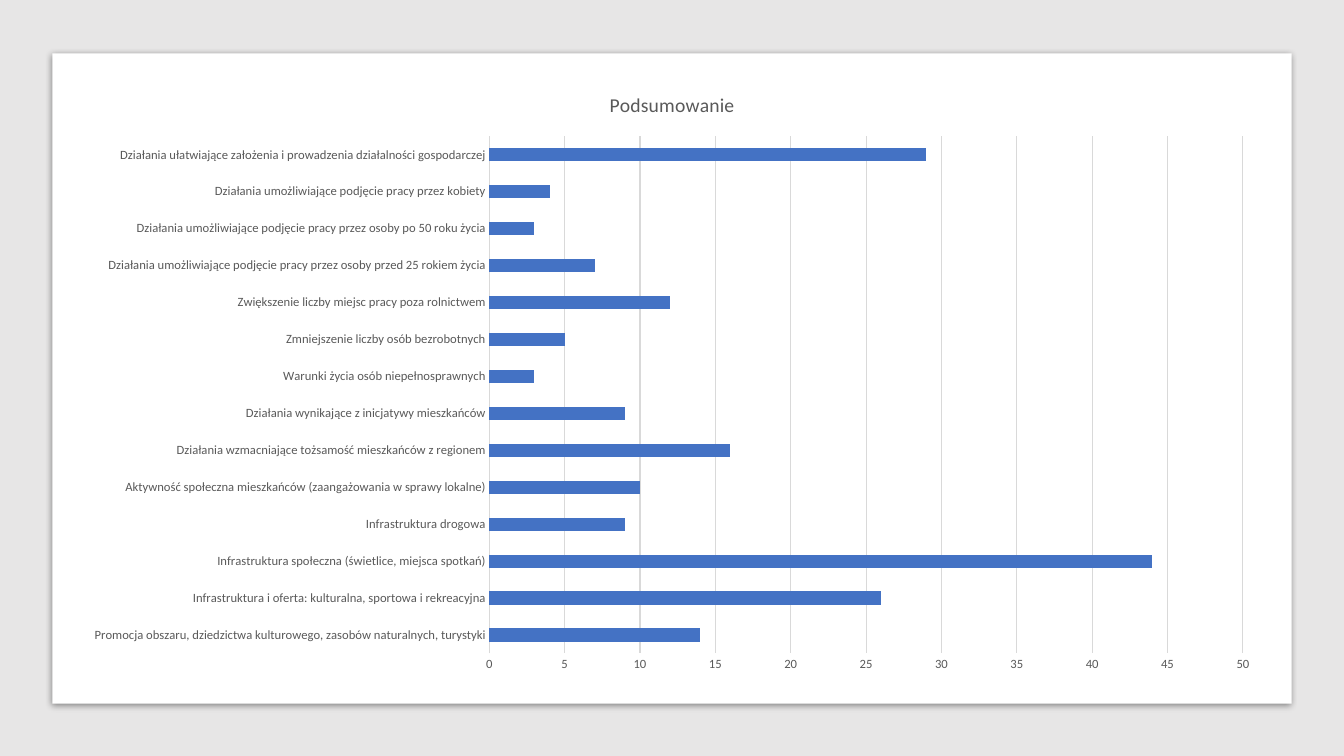
from lxml.etree import SubElement
from pptx import Presentation
from pptx.chart.data import CategoryChartData
from pptx.dml.color import RGBColor
from pptx.enum.chart import XL_CHART_TYPE as ChartType, XL_TICK_MARK as TickMark
from pptx.enum.shapes import MSO_SHAPE as ShapeType
from pptx.oxml.ns import qn
from pptx.util import Inches, Pt

TITLE = "Podsumowanie"
GREY_TEXT = "595959"
GREY_LINE = "D9D9D9"
ANSWERS = {
    "Promocja obszaru, dziedzictwa kulturowego, zasobów naturalnych, turystyki": 14,
    "Infrastruktura i oferta: kulturalna, sportowa i rekreacyjna": 26,
    "Infrastruktura społeczna (świetlice, miejsca spotkań)": 44,
    "Infrastruktura drogowa": 9,
    "Aktywność społeczna mieszkańców (zaangażowania w sprawy lokalne)": 10,
    "Działania wzmacniające tożsamość mieszkańców z regionem": 16,
    "Działania wynikające z inicjatywy mieszkańców": 9,
    "Warunki życia osób niepełnosprawnych": 3,
    "Zmniejszenie liczby osób bezrobotnych": 5,
    "Zwiększenie liczby miejsc pracy poza rolnictwem": 12,
    "Działania umożliwiające podjęcie pracy przez osoby przed 25 rokiem życia": 7,
    "Działania umożliwiające podjęcie pracy przez osoby po 50 roku życia": 3,
    "Działania umożliwiające podjęcie pracy przez kobiety": 4,
    "Działania ułatwiające założenia i prowadzenia działalności gospodarczej": 29,
}


def color(value):
    return RGBColor.from_string(value)


def set_values(target, values):
    for name, value in values.items():
        setattr(target, name, value)


def format_font(font, size, font_color):
    set_values(font, {"name": "Calibri", "size": Pt(size), "bold": False})
    font.color.rgb = color(font_color)


def format_line(line):
    line.color.rgb = color(GREY_LINE)
    line.width = Pt(0.75)


def add_panel(slide, left, top, width, height, fill):
    shape = slide.shapes.add_shape(
        ShapeType.RECTANGLE, Inches(left), Inches(top), Inches(width), Inches(height)
    )
    shape.shadow.inherit = False
    shape.fill.solid()
    shape.fill.fore_color.rgb = color(fill)
    shape.line.fill.background()
    return shape


def add_shadow(shape, blur, distance, opacity):
    effects = shape.element.spPr.find(qn("a:effectLst"))
    shadow = SubElement(
        effects, qn("a:outerShdw"), blurRad=str(Pt(blur)), dist=str(Pt(distance)),
        dir=str(90 * 60000), algn="t", rotWithShape="0",
    )
    shade = SubElement(shadow, qn("a:srgbClr"), val="000000")
    SubElement(shade, qn("a:alpha"), val=str(opacity * 1000))


def format_axis(axis, values):
    set_values(axis, {
        "major_tick_mark": TickMark.NONE,
        "minor_tick_mark": TickMark.NONE,
        **values,
    })
    format_font(axis.tick_labels.font, 9, GREY_TEXT)


def add_summary_chart(slide):
    data = CategoryChartData()
    data.categories = list(ANSWERS)
    data.add_series(TITLE, list(ANSWERS.values()))
    chart = slide.shapes.add_chart(
        ChartType.BAR_CLUSTERED,
        Inches(0.7), Inches(0.7), Inches(11.93), Inches(6.09), data,
    ).chart
    format_font(chart.font, 10, "000000")
    chart.has_legend = False

    chart.has_title = True
    chart.chart_title.include_in_layout = False
    paragraph = chart.chart_title.text_frame.paragraphs[0]
    run = paragraph.add_run()
    run.text = TITLE
    format_font(run.font, 14, GREY_TEXT)

    format_axis(chart.category_axis, {"has_major_gridlines": False})
    format_line(chart.category_axis.format.line)
    format_axis(chart.value_axis, {
        "has_major_gridlines": True,
        "minimum_scale": 0,
        "maximum_scale": 50,
        "major_unit": 5,
    })
    chart.value_axis.format.line.fill.background()
    format_line(chart.value_axis.major_gridlines.format.line)

    plot = chart.plots[0]
    set_values(plot, {"gap_width": 182, "vary_by_categories": False})
    fill = plot.series[0].format.fill
    fill.solid()
    fill.fore_color.rgb = color("4472C4")


def main():
    presentation = Presentation()
    set_values(presentation, {
        "slide_width": Inches(13.33), "slide_height": Inches(7.5),
    })
    slide = presentation.slides.add_slide(presentation.slide_layouts[6])
    add_panel(slide, 0, 0, 13.33, 7.5, "E7E6E6")
    card = add_panel(slide, 0.52, 0.53, 12.29, 6.45, "FFFFFF")
    add_shadow(card, 5, 1.4, 43)
    add_summary_chart(slide)
    presentation.save("out.pptx")


if __name__ == "__main__":
    main()
